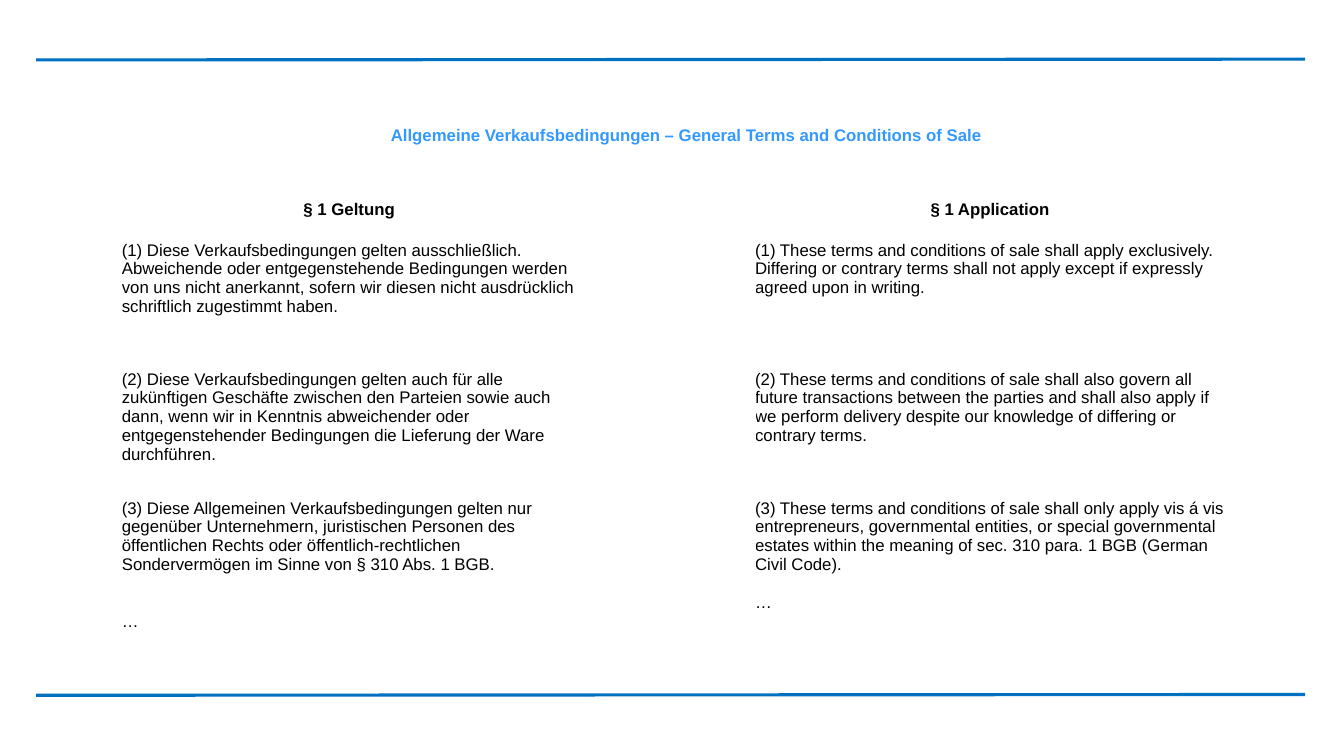
from lxml.etree import SubElement
from pptx import Presentation
from pptx.dml.color import RGBColor as Rgb
from pptx.enum.shapes import MSO_CONNECTOR as Connector
from pptx.enum.text import MSO_AUTO_SIZE as AutoSize, PP_ALIGN as Align
from pptx.oxml.ns import qn
from pptx.util import Cm, Pt

COLORS = {"rule": "0070C0", "title": "3399FF", "text": "000000", "border": "FFFFFF"}

TITLE = "Allgemeine Verkaufsbedingungen – General Terms and Conditions of Sale"
CLAUSES = [
    ("§ 1 Geltung", "§ 1 Application"),
    ("(1) Diese Verkaufsbedingungen gelten ausschließlich. Abweichende oder "
     "entgegenstehende Bedingungen werden von uns nicht anerkannt, sofern wir "
     "diesen nicht ausdrücklich schriftlich zugestimmt haben.",
     "(1) These terms and conditions of sale shall apply exclusively. Differing or "
     "contrary terms shall not apply except if expressly agreed upon in writing."),
    ("(2) Diese Verkaufsbedingungen gelten auch für alle zukünftigen Geschäfte "
     "zwischen den Parteien sowie auch dann, wenn wir in Kenntnis abweichender oder "
     "entgegenstehender Bedingungen die Lieferung der Ware durchführen.",
     "(2) These terms and conditions of sale shall also govern all future "
     "transactions between the parties and shall also apply if we perform delivery "
     "despite our knowledge of differing or contrary terms."),
    ("(3) Diese Allgemeinen Verkaufsbedingungen gelten nur gegenüber Unternehmern, "
     "juristischen Personen des öffentlichen Rechts oder öffentlich-rechtlichen "
     "Sondervermögen im Sinne von § 310 Abs. 1 BGB.\n…",
     "(3) These terms and conditions of sale shall only apply vis á vis "
     "entrepreneurs, governmental entities, or special governmental estates within "
     "the meaning of sec. 310 para. 1 BGB (German Civil Code).\n…"),
]
COLUMN_WIDTHS = [11.46, 4.5, 11.84]
ROW_HEIGHTS = [1.02, 3.25, 3.25, 4.65]
# Table column of each language, with the gap in points above its ellipsis
LANGUAGE_COLUMNS = [(0, 27), (2, 13.5)]


class SlideBuilder:
    font_name = "Arial"
    font_size = Pt(12)

    def __init__(self, page):
        self.page = page

    def style(self, para, color, bold=False):
        for span in para.runs:
            span.font.name = self.font_name
            span.font.size = self.font_size
            span.font.bold = bold
            span.font.color.rgb = Rgb.from_string(COLORS[color])

    def rule(self, left, right, start_y, end_y):
        line = self.page.shapes.add_connector(
            Connector.STRAIGHT, Cm(left), Cm(start_y), Cm(right), Cm(end_y))
        line.line.color.rgb = Rgb.from_string(COLORS["rule"])
        line.line.width = Pt(2.25)
        SubElement(line._element.spPr, qn("a:effectLst"))

    def title(self, text, left, top, width, height):
        box = self.page.shapes.add_textbox(Cm(left), Cm(top), Cm(width), Cm(height))
        frame = box.text_frame
        frame.word_wrap = True
        frame.auto_size = AutoSize.SHAPE_TO_FIT_TEXT
        frame.text = text
        para = frame.paragraphs[0]
        para.line_spacing = 1.5
        para.space_before, para.space_after = Pt(9), Pt(4)
        self.style(para, "title", bold=True)

    def cell_frame(self, cell):
        cell.margin_left = cell.margin_right = cell.margin_top = cell.margin_bottom = 0
        properties = cell._tc.get_or_add_tcPr()
        for side in ("lnL", "lnR", "lnT", "lnB"):
            border = SubElement(properties, qn(f"a:{side}"), w=str(Pt(1)))
            fill = SubElement(border, qn("a:solidFill"))
            SubElement(fill, qn("a:srgbClr"), val=COLORS["border"])
        cell.fill.background()

    def cell_text(self, cell, text, heading, gap):
        cell.text_frame.text = text
        for index, para in enumerate(cell.text_frame.paragraphs):
            para.alignment = Align.CENTER if heading else Align.LEFT
            if index:
                para.space_before = Pt(gap)
            self.style(para, "text", bold=heading)

    def clause_table(self, left, top):
        table = self.page.shapes.add_table(
            len(ROW_HEIGHTS), len(COLUMN_WIDTHS), Cm(left), Cm(top),
            Cm(sum(COLUMN_WIDTHS)), Cm(sum(ROW_HEIGHTS))).table
        table.first_row = table.horz_banding = False
        for column, width in zip(table.columns, COLUMN_WIDTHS):
            column.width = Cm(width)
        for row, height in zip(table.rows, ROW_HEIGHTS):
            row.height = Cm(height)
        for cell in table.iter_cells():
            self.cell_frame(cell)
        for row, texts in enumerate(CLAUSES):
            for (column, gap), text in zip(LANGUAGE_COLUMNS, texts):
                self.cell_text(table.cell(row, column), text, row == 0, gap)


def main():
    deck = Presentation()
    deck.slide_width, deck.slide_height = Cm(33.87), Cm(19.05)
    builder = SlideBuilder(deck.slides.add_slide(deck.slide_layouts[6]))

    # Rules at top and bottom
    builder.rule(0.91, 32.89, 1.51, 1.49)
    builder.rule(0.91, 32.89, 17.52, 17.5)

    # Title and bilingual clauses
    builder.title(TITLE, 9.6, 2.77, 22.81, 0.94)
    builder.clause_table(3.07, 5.05)

    deck.save("out.pptx")


if __name__ == "__main__":
    main()
